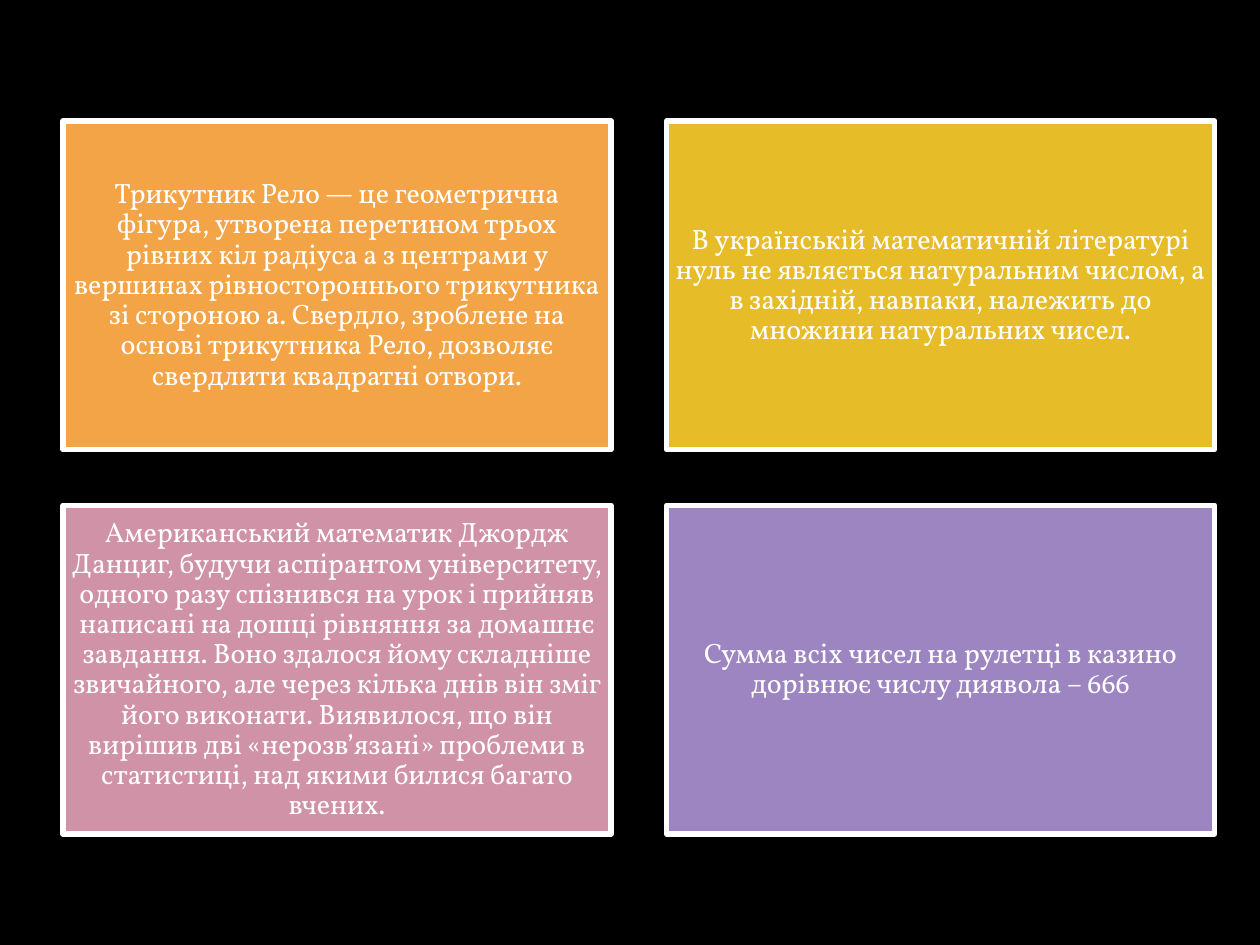
"""Build a slide with four coloured cards of mathematical facts."""
from pptx import Presentation
from pptx.dml.color import RGBColor as RGB
from pptx.enum.shapes import MSO_SHAPE as SHAPE
from pptx.enum.text import MSO_ANCHOR as ANCHOR, PP_ALIGN as ALIGN
from pptx.util import Pt

COLORS = {
    "background": "000000",
    "white": "FFFFFF",
    "orange": "F3A447",
    "yellow": "E7BC29",
    "pink": "D092A7",
    "purple": "9C85C0",
}
FACTS = [
    ("orange", "Трикутник Рело — це геометрична фігура, утворена перетином трьох "
     "рівних кіл радіуса a з центрами у вершинах рівностороннього трикутника "
     "зі стороною a. Свердло, зроблене на основі трикутника Рело, дозволяє "
     "свердлити квадратні отвори."),
    ("yellow", "В українській математичній літературі нуль не являється натуральним "
     "числом, а в західній, навпаки, належить до множини натуральних чисел."),
    ("pink", "Американський математик Джордж Данциг, будучи аспірантом "
     "університету, одного разу спізнився на урок і прийняв написані на дошці "
     "рівняння за домашнє завдання. Воно здалося йому складніше звичайного, "
     "але через кілька днів він зміг його виконати. Виявилося, що він вирішив "
     "дві «нерозв’язані» проблеми в статистиці, над якими билися багато вчених."),
    ("purple", "Сумма всіх чисел на рулетці в казино дорівнює числу диявола – 666"),
]
LEFT, TOP = 36, 69.1
CARD_W, CARD_H = 313.2, 187.9
GAP = 31.7
INSET = Pt(4.8)

prs = Presentation()
prs.slide_width, prs.slide_height = Pt(720), Pt(540)
s = prs.slides.add_slide(prs.slide_layouts[6])
s.background.fill.solid()
s.background.fill.fore_color.rgb = RGB.from_string(COLORS["background"])
white = RGB.from_string(COLORS["white"])

for i, (color, text) in enumerate(FACTS):
    row, col = divmod(i, 2)
    sp = s.shapes.add_shape(
        SHAPE.RECTANGLE,
        Pt(LEFT + col * (CARD_W + GAP)), Pt(TOP + row * (CARD_H + GAP)),
        Pt(CARD_W), Pt(CARD_H))
    sp.shadow.inherit = False
    sp.fill.solid()
    sp.fill.fore_color.rgb = RGB.from_string(COLORS[color])
    sp.line.color.rgb = white
    sp.line.width = Pt(3)
    tf = sp.text_frame
    tf.word_wrap = True
    tf.vertical_anchor = ANCHOR.MIDDLE
    tf.margin_left = tf.margin_right = tf.margin_top = tf.margin_bottom = INSET
    p = tf.paragraphs[0]
    p.text = text
    p.alignment = ALIGN.CENTER
    p.line_spacing = 0.9
    p.space_after = Pt(5.6)
    p.font.name = "Vollkorn"
    p.font.size = Pt(16)
    p.font.color.rgb = white

prs.save("out.pptx")
